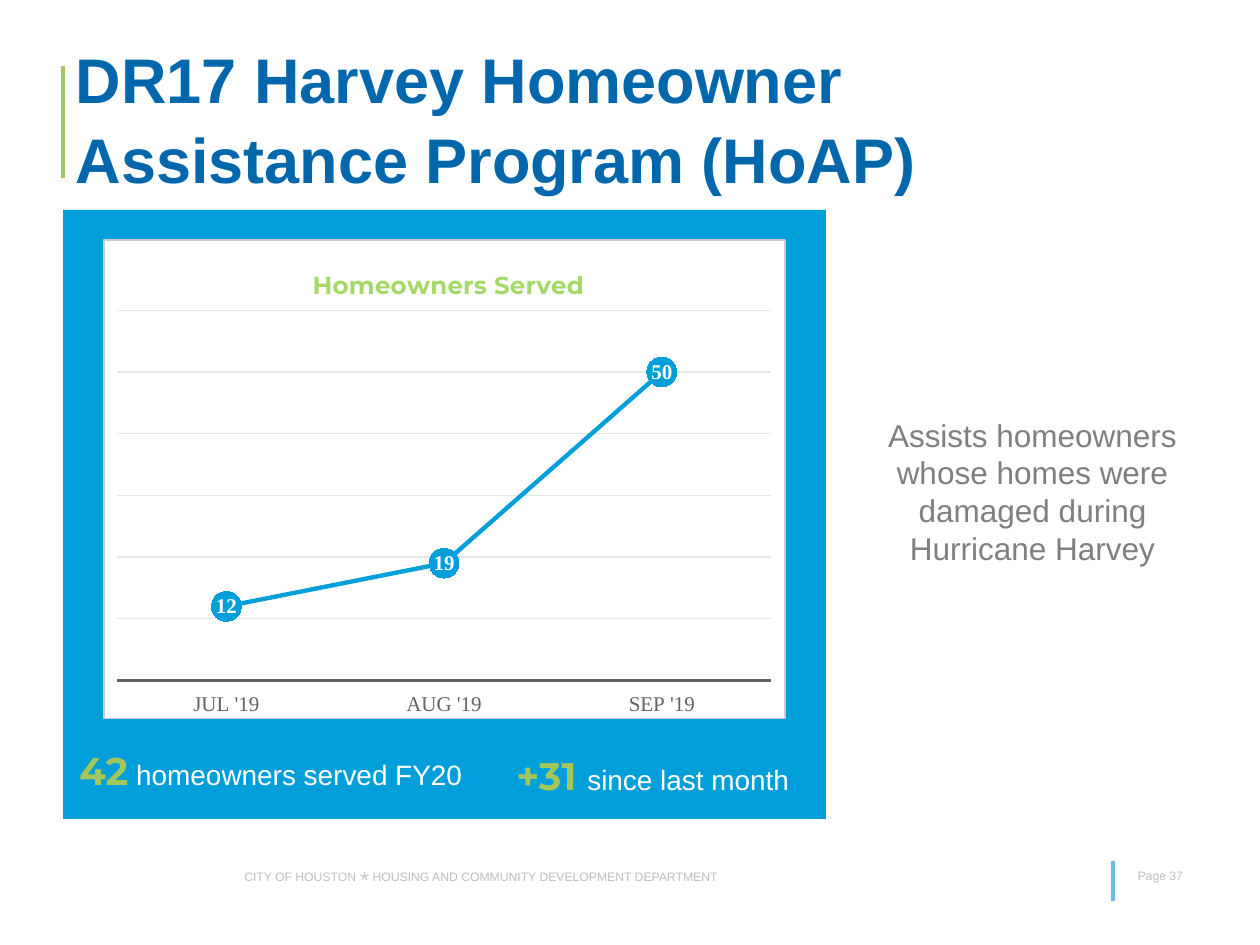
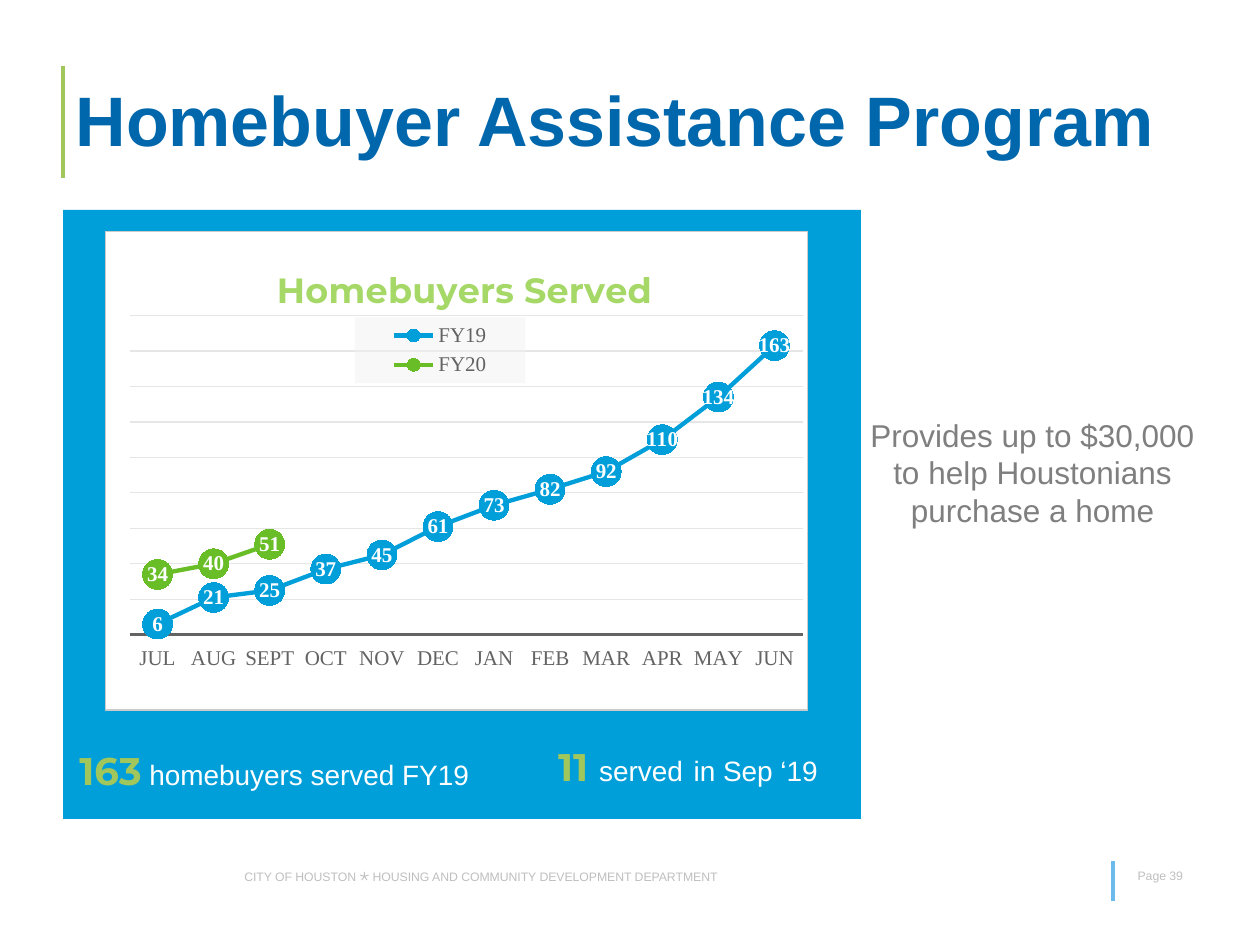
from pptx import Presentation
from pptx.chart.data import CategoryChartData
from pptx.dml.color import RGBColor
from pptx.enum.chart import (XL_CHART_TYPE, XL_LABEL_POSITION, XL_LEGEND_POSITION,
                             XL_MARKER_STYLE, XL_TICK_LABEL_POSITION, XL_TICK_MARK)
from pptx.enum.shapes import MSO_CONNECTOR, MSO_SHAPE
from pptx.enum.text import MSO_ANCHOR, MSO_AUTO_SIZE, PP_ALIGN
from pptx.oxml import parse_xml
from pptx.oxml.ns import nsdecls, qn
from pptx.util import Pt

COLORS = {
    "title": "0067AC", "panel": "009FDA", "green": "69BE28", "accent": "A0C65C",
    "chart_title": "A5D867", "white": "FFFFFF", "body": "7F7F7F", "footer": "BFBFBF",
    "footer_line": "6ABAEC", "axis": "636363", "grid": "E6E6E6", "border": "CBCBCB",
    "legend": "F2F2F2",
}
RGB = {name: RGBColor.from_string(value) for name, value in COLORS.items()}
SERIF = "Times New Roman"
FIGURE = ("Montserrat", 22, "accent", True)
CAPTION = ("Arial", 16, "white", False)
GAP = ("Arial", 22, "white", False)
FOOTER = ("Arial", 7, "footer", False)
STAR = ("Arial", 10, "footer", False)
NOTE = ("Arial", 18, "body", False)

PAGES = [
    {
        "title": "DR17 Harvey Homeowner Assistance Program (HoAP)", "title_size": 36,
        "number": "Page 37", "panel_width": 436,
        "chart_area": (59, 136.8, 390, 274.3),
        "chart_title": "Homeowners Served", "chart_title_size": 14,
        "chart_title_place": (0.3, 0.05), "plot_place": (0.02, 0.147, 0.959, 0.773),
        "categories": ["JUL '19", "AUG '19", "SEP '19"],
        "series": [("Series 1", [12, 19, 50], "panel")],
        "axis_top": 60, "axis_step": 10,
        "total": [("42", FIGURE), (" homeowners served FY20", CAPTION)],
        "change": [("+31 ", FIGURE), ("since last month", CAPTION)],
        "change_at": (288, 426.2),
        "note": "Assists homeowners whose homes were damaged during Hurricane Harvey",
    },
    {
        "title": "Homebuyer Assistance Program", "title_size": 40,
        "number": "Page 39", "panel_width": 456,
        "chart_area": (60, 131.8, 401.8, 274.3),
        "chart_title": "Homebuyers Served", "chart_title_size": 20,
        "chart_title_place": (0.235, 0.058), "plot_place": (0.034, 0.176, 0.959, 0.667),
        "categories": ["JUL", "AUG", "SEPT", "OCT", "NOV", "DEC",
                       "JAN", "FEB", "MAR", "APR", "MAY", "JUN"],
        "series": [("FY19", [6, 21, 25, 37, 45, 61, 73, 82, 92, 110, 134, 163], "panel"),
                   ("FY20", [34, 40, 51] + [None] * 9, "green")],
        "axis_top": 180, "axis_step": 20,
        "total": [("163", FIGURE), (" homebuyers served FY19", CAPTION)],
        "change": [("11 ", FIGURE), ("served", CAPTION), (" ", GAP), ("in Sep ‘19", CAPTION)],
        "change_at": (311.8, 421.2),
        "note": "Provides up to $30,000 to help Houstonians purchase a home",
    },
]


def add_text(page, left, top, width, height, spans, alignment=PP_ALIGN.LEFT):
    """Add a one-paragraph text box; each span is (text, (font, size, color, bold))."""
    box = page.shapes.add_textbox(Pt(left), Pt(top), Pt(width), Pt(height))
    box.text_frame.word_wrap = True
    paragraph = box.text_frame.paragraphs[0]
    paragraph.alignment = alignment
    for text, (font, size, color, bold) in spans:
        span = paragraph.add_run()
        span.text = text
        span.font.name, span.font.size, span.font.bold = font, Pt(size), bold
        span.font.color.rgb = RGB[color]


def place(element, index, fractions, target=""):
    """Give a chart part a manual layout in fractions of the chart area."""
    for old in element.findall(qn("c:layout")):
        element.remove(old)
    keys = ("x", "y", "w", "h")[:len(fractions)]
    modes = '<c:xMode val="edge"/><c:yMode val="edge"/>'
    values = "".join(f'<c:{key} val="{value}"/>' for key, value in zip(keys, fractions))
    element.insert(index, parse_xml(
        f'<c:layout {nsdecls("c")}><c:manualLayout>{target}{modes}{values}'
        '</c:manualLayout></c:layout>'))


deck = Presentation()
deck.slide_width, deck.slide_height = Pt(720), Pt(540)

for content in PAGES:
    page = deck.slides.add_slide(deck.slide_layouts[5])

    # Footer and rules
    add_text(page, 132.5, 490.3, 293.8, 19.4, [
        ("CITY OF HOUSTON ", FOOTER), ("⋆", STAR),
        (" HOUSING AND COMMUNITY DEVELOPMENT DEPARTMENT", FOOTER)])
    for x, top, bottom, color in [(635.8, 491.8, 514.8, "footer_line"),
                                  (36, 38, 102, "accent")]:
        rule = page.shapes.add_connector(MSO_CONNECTOR.STRAIGHT,
                                         Pt(x), Pt(top), Pt(x), Pt(bottom))
        rule.line.color.rgb, rule.line.width = RGB[color], Pt(2.25)
        rule._element.spPr.append(parse_xml(f'<a:effectLst {nsdecls("a")}/>'))
    add_text(page, 643, 492.5, 42, 22, [(content["number"], FOOTER)])

    # Title
    title = page.shapes.title
    title.left, title.top, title.width, title.height = Pt(36), Pt(21.6), Pt(648), Pt(90)
    title.text_frame.text = content["title"]
    title.text_frame.auto_size = MSO_AUTO_SIZE.NONE
    title.text_frame.vertical_anchor = MSO_ANCHOR.MIDDLE
    heading = title.text_frame.paragraphs[0]
    heading.alignment, heading.line_spacing = PP_ALIGN.LEFT, 1.05
    heading.font.name, heading.font.bold = "Arial", True
    heading.font.size = Pt(content["title_size"])
    heading.font.color.rgb = RGB["title"]

    # Panel with the key figures
    panel = page.shapes.add_shape(MSO_SHAPE.RECTANGLE, Pt(36), Pt(120),
                                  Pt(content["panel_width"]), Pt(348))
    panel.shadow.inherit = False
    panel.fill.solid()
    panel.fill.fore_color.rgb = RGB["panel"]
    panel.line.fill.background()
    add_text(page, 38.2, 423.4, 273, 34, content["total"])
    add_text(page, *content["change_at"], 182, 34, content["change"])
    add_text(page, 486, 234, 208, 94, [(content["note"], NOTE)], PP_ALIGN.CENTER)

    # Chart
    chart_data = CategoryChartData()
    chart_data.categories = content["categories"]
    for name, values, color in content["series"]:
        chart_data.add_series(name, values)
    chart = page.shapes.add_chart(XL_CHART_TYPE.LINE_MARKERS,
                                  *map(Pt, content["chart_area"]), chart_data).chart
    chart.font.name, chart.font.size = SERIF, Pt(10)
    chart_space = chart._chartSpace
    chart_space.find(qn("c:chart")).addnext(parse_xml(
        f'<c:spPr {nsdecls("c", "a")}><a:solidFill><a:srgbClr val="{COLORS["white"]}"/>'
        f'</a:solidFill><a:ln w="9525"><a:solidFill><a:srgbClr val="{COLORS["border"]}"/>'
        '</a:solidFill></a:ln></c:spPr>'))
    place(chart_space.find(".//" + qn("c:plotArea")), 0, content["plot_place"],
          '<c:layoutTarget val="inner"/>')

    chart.has_title = True
    chart.chart_title.text_frame.text = content["chart_title"]
    caption = chart.chart_title.text_frame.paragraphs[0]
    caption.font.name, caption.font.bold = "Montserrat", True
    caption.font.size = Pt(content["chart_title_size"])
    caption.font.color.rgb = RGB["chart_title"]
    place(chart.chart_title._element, 1, content["chart_title_place"])

    months = chart.category_axis
    months.major_tick_mark = months.minor_tick_mark = XL_TICK_MARK.NONE
    months.tick_label_position = XL_TICK_LABEL_POSITION.LOW
    months.tick_labels.font.name, months.tick_labels.font.size = SERIF, Pt(12)
    months.tick_labels.font.color.rgb = RGB["axis"]
    months.format.line.color.rgb, months.format.line.width = RGB["axis"], Pt(1.5)

    served = chart.value_axis
    served.minimum_scale, served.maximum_scale = 0, content["axis_top"]
    served.major_unit = content["axis_step"]
    served.has_major_gridlines = True
    served.major_gridlines.format.line.color.rgb = RGB["grid"]
    served.major_gridlines.format.line.width = Pt(0.75)
    served.visible = False

    plot = chart.plots[0]
    plot.vary_by_categories = False
    for series, (name, values, color) in zip(plot.series, content["series"]):
        series.smooth = False
        series.format.line.color.rgb, series.format.line.width = RGB[color], Pt(2.5)
        series.marker.style, series.marker.size = XL_MARKER_STYLE.CIRCLE, 17
        series.marker.format.fill.solid()
        series.marker.format.fill.fore_color.rgb = RGB[color]
        series.marker.format.line.fill.background()
        labels = series.data_labels
        labels.show_value, labels.position = True, XL_LABEL_POSITION.CENTER
        labels.font.name, labels.font.size, labels.font.bold = SERIF, Pt(12), True
        labels.font.color.rgb = RGB["white"]

    chart.has_legend = len(content["series"]) > 1
    if chart.has_legend:
        legend = chart.legend
        legend.position = XL_LEGEND_POSITION.RIGHT
        legend.include_in_layout = False
        legend.font.name, legend.font.size = SERIF, Pt(12)
        legend.font.color.rgb = RGB["axis"]
        place(legend._element, 1, (0.355, 0.18, 0.243, 0.137))
        legend._element.find(qn("c:overlay")).addnext(parse_xml(
            f'<c:spPr {nsdecls("c", "a")}><a:solidFill><a:srgbClr val="{COLORS["legend"]}">'
            '<a:alpha val="50000"/></a:srgbClr></a:solidFill></c:spPr>'))

deck.save("out.pptx")
